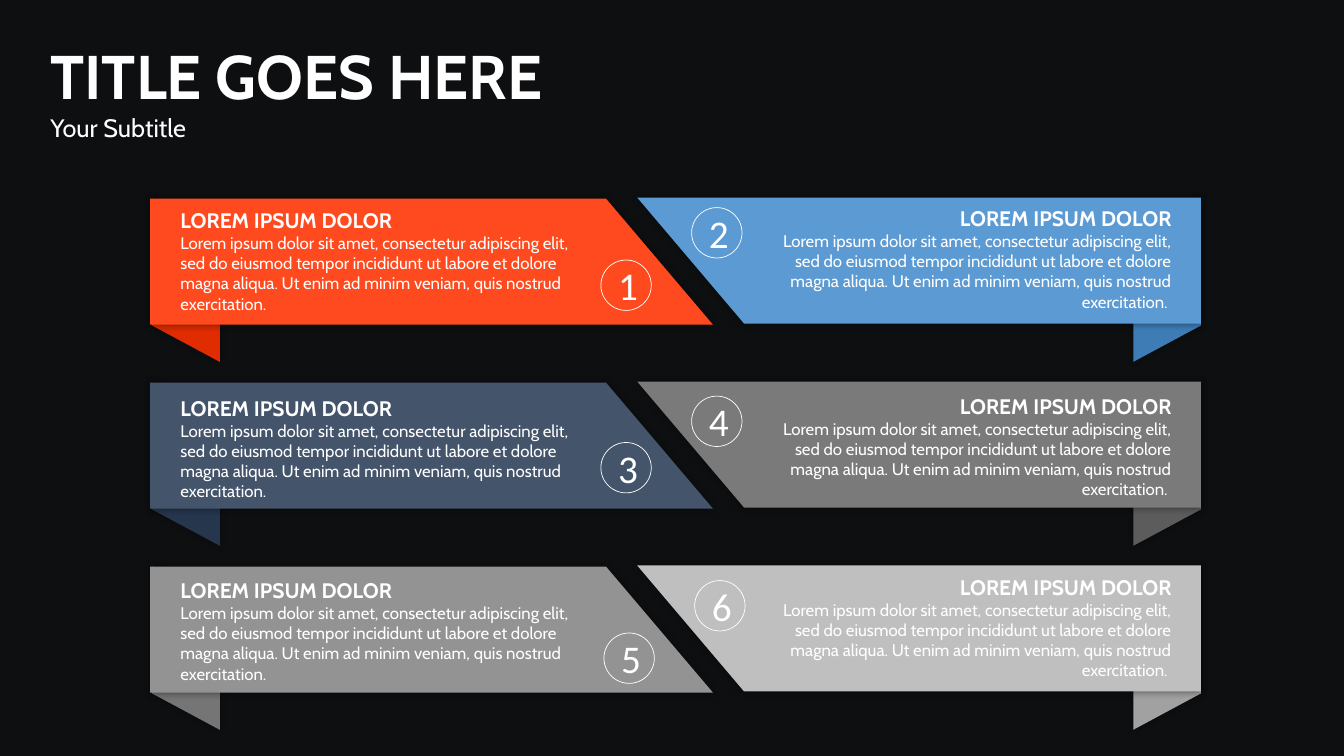
import pptx
import pptx.util
import pptx.dml.color
import pptx.enum.shapes
import pptx.enum.text
import pptx.oxml.ns
import lxml.etree

Inches = pptx.util.Inches
Pt = pptx.util.Pt
RGB = pptx.dml.color.RGBColor
ALIGN = pptx.enum.text.PP_ALIGN
ANCHOR = pptx.enum.text.MSO_ANCHOR
qn = pptx.oxml.ns.qn

DARK = RGB(0x0E, 0x0F, 0x11)
WHITE = RGB(0xFF, 0xFF, 0xFF)
BLACK = RGB(0, 0, 0)
RED = RGB(0xFE, 0x4A, 0x1E)
RUST = RGB(0xE0, 0x2C, 0x00)
BLUE = RGB(0x5C, 0x9A, 0xD3)
DEEP = RGB(0x3E, 0x7C, 0xB5)
SLATE = RGB(0x44, 0x54, 0x6B)
NAVY = RGB(0x26, 0x36, 0x4D)
GRAY = RGB(0x7A, 0x7A, 0x7A)
COAL = RGB(0x5C, 0x5C, 0x5C)
STEEL = RGB(0x93, 0x93, 0x93)
LEAD = RGB(0x75, 0x75, 0x75)
PALE = RGB(0xBF, 0xBF, 0xBF)
ASH = RGB(0xA1, 0xA1, 0xA1)

HEAD = "LOREM IPSUM DOLOR"
BODY = ("Lorem ipsum dolor sit amet, consectetur adipiscing elit, sed do eiusmod "
        "tempor incididunt ut labore et dolore magna aliqua. Ut enim ad minim "
        "veniam, quis nostrud exercitation.")

LEFT = dict(rise=0, edge=1.49, top=6.01, low=7.07, fold=(1.51, 2.18),
            text=1.72, align=ALIGN.LEFT, body=BODY)
RIGHT = dict(rise=0.01, edge=11.91, top=6.32, low=7.38, fold=(11.91, 11.24),
             text=7.49, align=ALIGN.RIGHT, body=BODY + " ")

BANNERS = [
    ("1", LEFT, RED, RUST, (5.96, 2.58), 2.03),
    ("2", RIGHT, BLUE, DEEP, (6.86, 2.06), 2.01),
    ("3", LEFT, SLATE, NAVY, (5.96, 4.39), 3.89),
    ("4", RIGHT, GRAY, COAL, (6.86, 3.93), 3.87),
    ("5", LEFT, STEEL, LEAD, (5.99, 6.28), 5.7),
    ("6", RIGHT, PALE, ASH, (6.89, 5.76), 5.67),
]
START, PITCH, HIGH = 1.97, 1.825, 1.25
DROP, FALL = 0.36, 1.26
RING = 0.5


def write(frame, lines, font="Cabin", align=ALIGN.LEFT, anchor=ANCHOR.TOP, inset=(0.1, 0.05)):
    frame.word_wrap = True
    frame.auto_size = pptx.enum.text.MSO_AUTO_SIZE.NONE
    frame.vertical_anchor = anchor
    frame.margin_left = frame.margin_right = Inches(inset[0])
    frame.margin_top = frame.margin_bottom = Inches(inset[1])
    for i, (text, size, bold) in enumerate(lines):
        para = frame.add_paragraph() if i else frame.paragraphs[0]
        para.alignment = align
        run = para.add_run()
        run.text = text
        run.font.name = font
        run.font.size = Pt(size)
        run.font.bold = bold
        run.font.color.rgb = WHITE


def draw(shapes, points, color):
    spots = [(Inches(x), Inches(y)) for x, y in points]
    pen = shapes.build_freeform(*spots[0], scale=1.0)
    pen.add_line_segments(spots[1:], close=True)
    shape = pen.convert_to_shape()
    shape.fill.solid()
    shape.fill.fore_color.rgb = color
    shape.line.fill.background()
    shape.shadow.inherit = False
    glow = shape._element.spPr.find(qn("a:effectLst"))
    cast = lxml.etree.SubElement(glow, qn("a:outerShdw"), blurRad=str(Pt(5)),
                                 dist="0", dir="0", algn="ctr", rotWithShape="0")
    tint = lxml.etree.SubElement(cast, qn("a:srgbClr"), val=str(BLACK))
    lxml.etree.SubElement(tint, qn("a:alpha"), val="40000")


def main():
    deck = pptx.Presentation()
    deck.slide_width = Inches(13.33)
    deck.slide_height = Inches(7.5)
    slide = deck.slides.add_slide(deck.slide_layouts[5])
    slide.background.fill.solid()
    slide.background.fill.fore_color.rgb = DARK
    shapes = slide.shapes

    title = shapes.title
    title.left, title.top = Inches(0.4), Inches(0.33)
    title.width, title.height = Inches(6.5), Inches(1.14)
    write(title.text_frame, [("TITLE GOES HERE", 44, True), ("Your Subtitle", 18, False)])

    for i, (_, side, face, shade, _, _) in reversed(list(enumerate(BANNERS))):
        base = START + i // 2 * PITCH
        near, far = side["fold"]
        draw(shapes, [(near, base), (near, base + FALL),
                      (far, base + DROP + FALL), (far, base + DROP)], shade)
        top = base - side["rise"]
        edge = side["edge"]
        draw(shapes, [(edge, top), (side["top"], top),
                      (side["low"], top + HIGH), (edge, top + HIGH)], face)

    for num, _, _, _, (x, y), _ in BANNERS:
        ring = shapes.add_shape(pptx.enum.shapes.MSO_SHAPE.OVAL, Inches(x), Inches(y),
                                Inches(RING), Inches(RING))
        ring.shadow.inherit = False
        ring.fill.background()
        ring.line.color.rgb = WHITE
        ring.line.width = Pt(0.5)
        write(ring.text_frame, [(num, 28, False)], font="Calibri",
              align=ALIGN.CENTER, anchor=ANCHOR.MIDDLE)

    for _, side, _, _, _, y in BANNERS:
        box = shapes.add_textbox(Inches(side["text"]), Inches(y), Inches(4.2), Inches(1.13))
        write(box.text_frame, [(HEAD, 15, True), (side["body"], 12, False)],
              align=side["align"], inset=(0.07, 0.03))

    deck.save("out.pptx")


if __name__ == "__main__":
    main()
